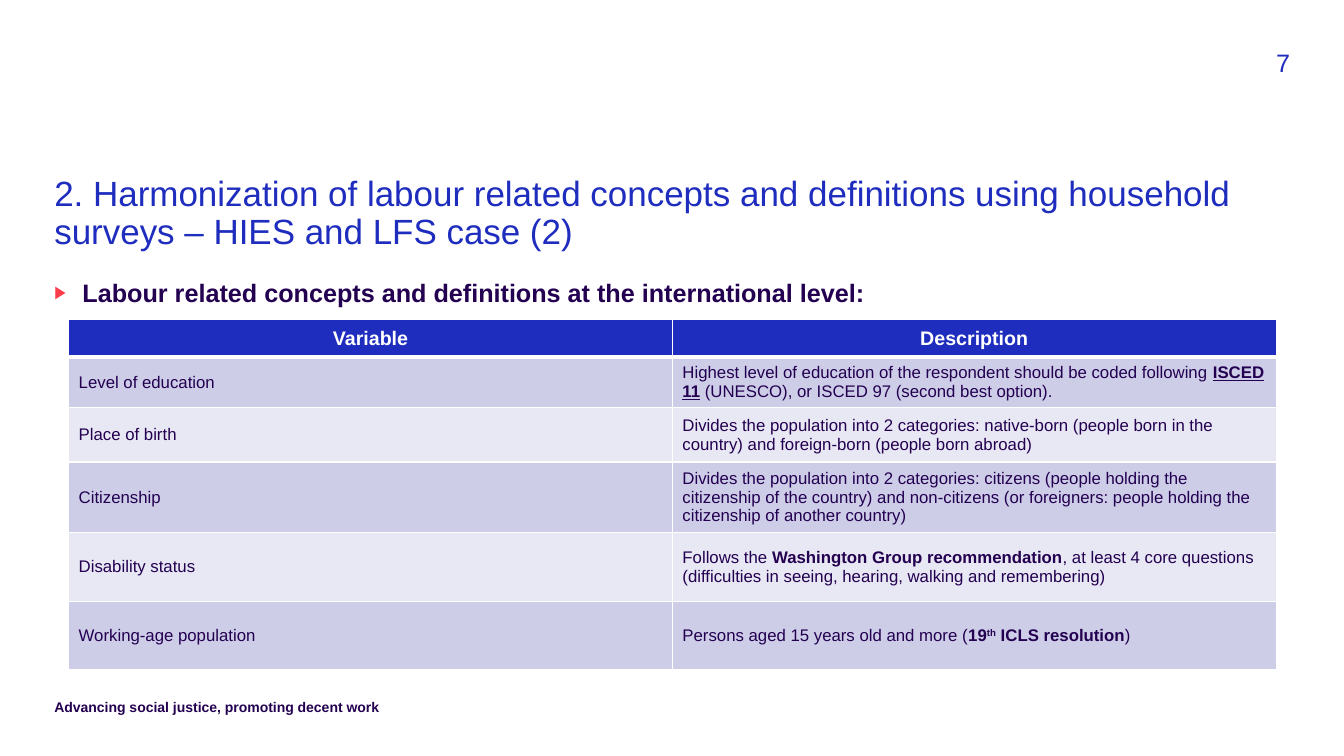
from lxml import etree
from pptx import Presentation
from pptx.dml.color import RGBColor
from pptx.enum.text import MSO_ANCHOR, PP_ALIGN
from pptx.oxml.ns import qn
from pptx.util import Cm, Pt

MIDDLE = MSO_ANCHOR.MIDDLE
LEFT, CENTER, RIGHT = PP_ALIGN.LEFT, PP_ALIGN.CENTER, PP_ALIGN.RIGHT
FONT = "Arial"
BLUE, INK, RED, WHITE = "1E2DBE", "230050", "FA3C4B", "FFFFFF"
BANDS = ("CDCDE8", "E8E8F4")
ROW_HEIGHTS = (0.94, 1.22, 1.37, 1.73, 1.73, 1.73)

DEFINITIONS = [
    ("Level of education", [
        ("Highest level of education of the respondent should be coded following ", ""),
        ("ISCED 11", "bold underline"),
        (" (UNESCO), or ISCED 97 (second best option).", "")]),
    ("Place of birth", [
        ("Divides the population into 2 categories: native-born (people born in the "
         "country) and foreign-born (people born abroad)", "")]),
    ("Citizenship", [
        ("Divides the population into 2 categories: citizens (people holding the "
         "citizenship of the country) and non-citizens (or foreigners: people holding "
         "the citizenship of another country)", "")]),
    ("Disability status", [
        ("Follows the ", ""),
        ("Washington Group recommendation", "bold"),
        (", at least 4 core questions (difficulties in seeing, hearing, walking and "
         "remembering)", "")]),
    ("Working-age population", [
        ("Persons aged 15 years old and more (", ""),
        ("19", "bold"),
        ("th", "bold superscript"),
        (" ICLS resolution", "bold"),
        (")", "")]),
]


def rgb(color):
    return RGBColor.from_string(color)


def style_run(run, size, color, style=""):
    run.font.name = FONT
    run.font.size = Pt(size)
    run.font.color.rgb = rgb(color)
    run.font.bold = "bold" in style
    if "underline" in style:
        run.font.underline = True
    if "superscript" in style:
        run.font._element.set("baseline", "30000")


def add_line(slide, box, text, size, color, style="", align=LEFT):
    frame = slide.shapes.add_textbox(*map(Cm, box)).text_frame
    frame.word_wrap = True
    frame.margin_left = frame.margin_right = frame.margin_top = frame.margin_bottom = 0
    line = frame.paragraphs[0]
    line.text = text
    line.alignment = align
    style_run(line.runs[0], size, color, style)
    return line


def add_title(slide, box):
    title = add_line(
        slide, box,
        "2. Harmonization of labour related concepts and definitions using household "
        "surveys – HIES and LFS case (2)", 25, BLUE)
    title.line_spacing = 0.9


def add_lead(slide, box):
    lead = add_line(
        slide, box,
        "Labour related concepts and definitions at the international level:",
        18, INK, "bold")
    props = lead._p.get_or_add_pPr()
    props.set("marL", str(Cm(0.71)))
    props.set("indent", str(-Cm(0.71)))
    bullet_color = etree.SubElement(props, qn("a:buClr"))
    etree.SubElement(bullet_color, qn("a:srgbClr"), val=RED)
    etree.SubElement(props, qn("a:buSzPct"), val="70000")
    etree.SubElement(props, qn("a:buFont"), typeface=FONT)
    etree.SubElement(props, qn("a:buChar"), char="▶")


def set_borders(cell, top, bottom):
    props = cell._tc.get_or_add_tcPr()
    for side, width in (("L", 1), ("R", 1), ("T", top), ("B", bottom)):
        border = etree.SubElement(props, qn(f"a:ln{side}"), w=str(Pt(width)))
        fill = etree.SubElement(border, qn("a:solidFill"))
        etree.SubElement(fill, qn("a:srgbClr"), val=WHITE)


def fill_cell(cell, parts, size, color, background, align):
    cell.fill.solid()
    cell.fill.fore_color.rgb = rgb(background)
    cell.vertical_anchor = MIDDLE
    content = cell.text_frame.paragraphs[0]
    content.alignment = align
    for text, style in parts:
        run = content.add_run()
        run.text = text
        style_run(run, size, color, style)


def add_definitions(slide, box):
    header = [[("Variable", "bold")], [("Description", "bold")]]
    rows = [header] + [[[(name, "")], parts] for name, parts in DEFINITIONS]
    table = slide.shapes.add_table(len(rows), 2, *map(Cm, box)).table
    for column in table.columns:
        column.width = Cm(box[2] / 2)
    for r, cells in enumerate(rows):
        table.rows[r].height = Cm(ROW_HEIGHTS[r])
        for c, parts in enumerate(cells):
            cell = table.cell(r, c)
            set_borders(cell, 3 if r == 1 else 1, 3 if r == 0 else 1)
            if r == 0:
                fill_cell(cell, parts, 14, WHITE, BLUE, CENTER)
            else:
                fill_cell(cell, parts, 12, INK, BANDS[(r - 1) % 2], LEFT)


def main():
    deck = Presentation()
    deck.slide_width, deck.slide_height = Cm(33.87), Cm(19.05)
    slide = deck.slides.add_slide(deck.slide_layouts[6])
    add_title(slide, (1.37, 4.45, 31.14, 2))
    add_lead(slide, (1.37, 7, 30.2, 0.8))
    add_line(slide, (1.37, 17.6, 15.57, 0.5),
             "Advancing social justice, promoting decent work", 10, INK, "bold")
    add_line(slide, (31.01, 1.2, 1.5, 0.8), "7", 18, BLUE, align=RIGHT)
    add_definitions(slide, (1.73, 8.06, 30.43, sum(ROW_HEIGHTS)))
    deck.save("out.pptx")


if __name__ == "__main__":
    main()
